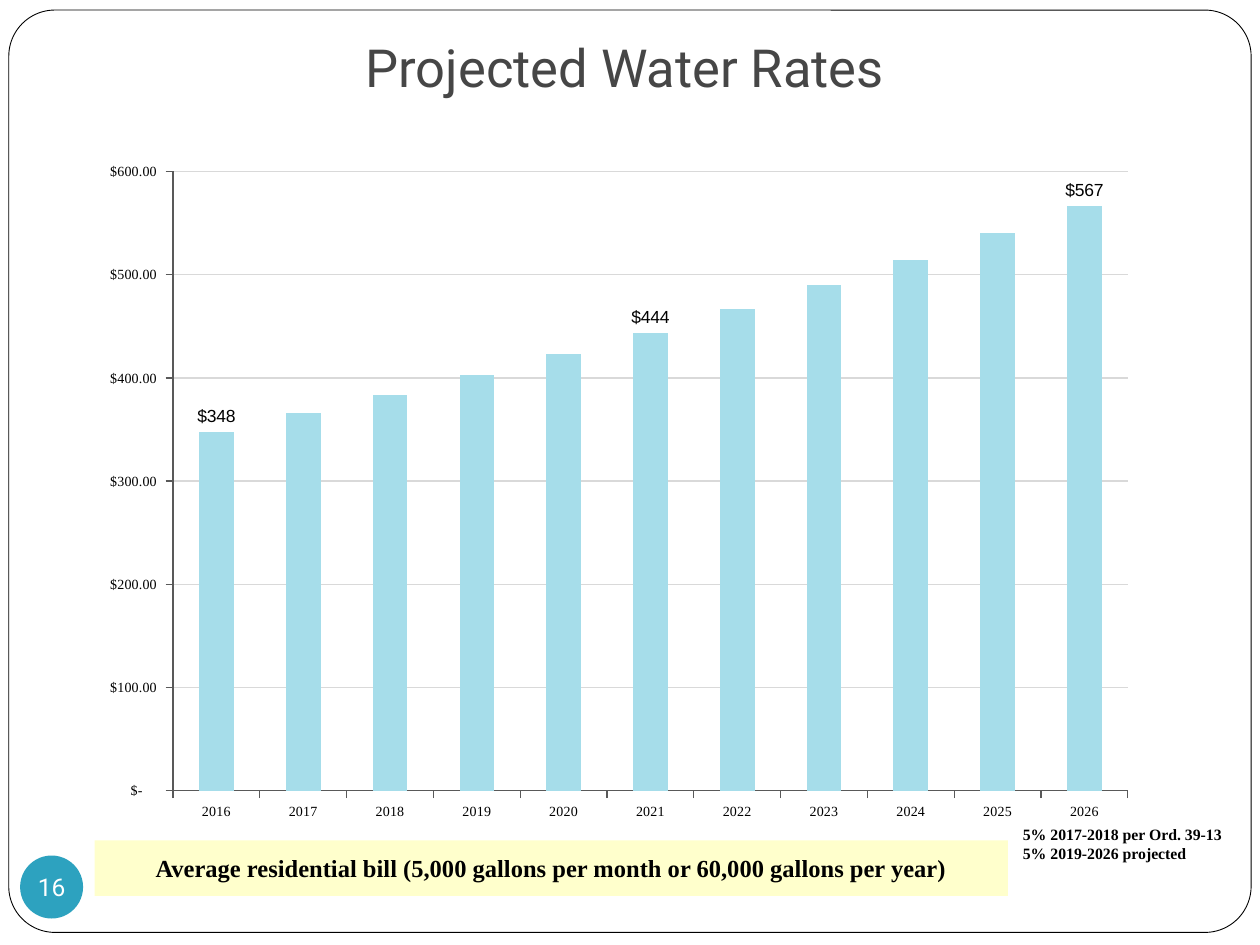
from lxml import etree
from pptx import Presentation
from pptx.chart.data import CategoryChartData
from pptx.dml.color import RGBColor
from pptx.enum.chart import XL_CHART_TYPE, XL_LABEL_POSITION, XL_TICK_MARK
from pptx.enum.shapes import MSO_SHAPE
from pptx.enum.text import MSO_ANCHOR, PP_ALIGN
from pptx.oxml import parse_xml
from pptx.oxml.ns import nsdecls, qn
from pptx.util import Inches, Pt

COLUMNS = XL_CHART_TYPE.COLUMN_CLUSTERED
ABOVE = XL_LABEL_POSITION.OUTSIDE_END
OUTSIDE = XL_TICK_MARK.OUTSIDE
NO_TICK = XL_TICK_MARK.NONE
ROUNDED, RECT, OVAL = MSO_SHAPE.ROUNDED_RECTANGLE, MSO_SHAPE.RECTANGLE, MSO_SHAPE.OVAL
CENTER, LEFT = PP_ALIGN.CENTER, PP_ALIGN.LEFT
TOP, MIDDLE, BOTTOM = MSO_ANCHOR.TOP, MSO_ANCHOR.MIDDLE, MSO_ANCHOR.BOTTOM

COLORS = {
    "paper": "FFFFFF", "ink": "000000", "title": "464646", "badge": "2DA2BF",
    "caption": "FFFFCC", "bar": "A6DDEA", "grid": "D9D9D9", "axis": "595959",
}
SERIF, SANS = "Times New Roman", "Roboto"


def style_font(font, name, size, color, bold=False):
    values = {"name": name, "size": Pt(size), "bold": bold}
    for key, value in values.items():
        setattr(font, key, value)
    font.color.rgb = RGBColor.from_string(COLORS[color])


def write(shape, lines, font, align, anchor, insets, wrap=True):
    frame = shape.text_frame
    frame.word_wrap = wrap
    frame.vertical_anchor = anchor
    for side, inset in zip(("left", "top", "right", "bottom"), insets):
        setattr(frame, f"margin_{side}", Inches(inset))
    for i, line in enumerate(lines):
        paragraph = frame.paragraphs[0] if i == 0 else frame.add_paragraph()
        paragraph.alignment = align
        run = paragraph.add_run()
        run.text = line
        style_font(run.font, *font)


prs = Presentation()
prs.slide_width, prs.slide_height = Inches(10), Inches(7.5)
slide = prs.slides.add_slide(prs.slide_layouts[5])
shapes = slide.shapes

# Frame, page badge and caption
plain = {}
for part, kind, box, fill in (
    ("frame", ROUNDED, (0.07, 0.08, 9.86, 7.32), "paper"),
    ("badge", OVAL, (0.16, 6.79, 0.5, 0.5), "badge"),
    ("caption", RECT, (0.75, 6.67, 7.25, 0.44), "caption"),
):
    shape = shapes.add_shape(kind, *map(Inches, box))
    shape.shadow.inherit = False
    shape.fill.solid()
    shape.fill.fore_color.rgb = RGBColor.from_string(COLORS[fill])
    shape.line.fill.background()
    plain[part] = shape

frame = plain["frame"]
frame.adjustments[0] = 0.05
frame.line.color.rgb = RGBColor.from_string(COLORS["ink"])
frame.line.width = Pt(0.5)
title = shapes.title
title._element.addprevious(frame._element)  # the frame lies behind the title

write(plain["badge"], ["16"], (SANS, 14, "paper"), CENTER, MIDDLE, (0, 0, 0, 0), wrap=False)
write(plain["caption"],
      ["Average residential bill (5,000 gallons per month or 60,000 gallons per year)"],
      (SERIF, 14, "ink", True), CENTER, TOP, (0.1, 0.1, 0.1, 0.1))

# Title
title.left, title.top, title.width, title.height = map(Inches, (0.25, 0.17, 9.42, 0.71))
write(title, ["Projected Water Rates"], (SANS, 30, "title"), CENTER, BOTTOM,
      (0.1, 0.05, 0.1, 0.1))

# Note on the rate increases
note = shapes.add_textbox(*map(Inches, (8.02, 6.5, 1.83, 0.48)))
write(note, ["5% 2017-2018 per Ord. 39-13", "5% 2019-2026 projected"],
      (SERIF, 9, "ink", True), LEFT, TOP, (0.1, 0.05, 0.1, 0.05))

# Chart of yearly bills
bills = CategoryChartData()
bills.categories = [str(year) for year in range(2016, 2027)]
bills.add_series("Series 1", (348, 365.62, 383.9, 403.1, 423.26, 444,
                              466.64, 489.97, 514.47, 540.19, 567))
chart = shapes.add_chart(COLUMNS, *map(Inches, (0.7, 1.2, 8.42, 5.4)), bills).chart
chart.has_legend = chart.has_title = False
style_font(chart.font, SERIF, 10, "ink")
plot = chart.plots[0]
plot.gap_width = 150
plot.vary_by_categories = False
bars = plot.series[0]
bars.format.fill.solid()
bars.format.fill.fore_color.rgb = RGBColor.from_string(COLORS["bar"])

# Fixed inner plot area
plot_area = chart._chartSpace.chart.plotArea
for old in plot_area.findall(qn("c:layout")):
    plot_area.remove(old)
layout = parse_xml(f"<c:layout {nsdecls('c')}><c:manualLayout/></c:layout>")
for tag, value in (("layoutTarget", "inner"), ("xMode", "edge"), ("yMode", "edge"),
                   ("x", "0.08"), ("y", "0.03"), ("w", "0.9"), ("h", "0.91")):
    etree.SubElement(layout[0], qn(f"c:{tag}")).set("val", value)
plot_area.insert(0, layout)

# Axes
years, dollars = chart.category_axis, chart.value_axis
for axis in (years, dollars):
    axis.major_tick_mark = OUTSIDE
    axis.minor_tick_mark = NO_TICK
    axis.format.line.color.rgb = RGBColor.from_string(COLORS["axis"])
    axis.format.line.width = Pt(0.75)
    style_font(axis.tick_labels.font, SERIF, 8, "ink")
for key, value in {"minimum_scale": 0, "maximum_scale": 600, "major_unit": 100}.items():
    setattr(dollars, key, value)
dollars.has_major_gridlines = True
grid = dollars.major_gridlines.format.line
grid.color.rgb = RGBColor.from_string(COLORS["grid"])
grid.width = Pt(0.75)
dollars.tick_labels.number_format = (
    '_("$"* #,##0.00_);_("$"* \\(#,##0.00\\);_("$"* "-"??_);_(@_)')
dollars.tick_labels.number_format_is_linked = False

# Labels on the first, middle and last bar
bars.data_labels.show_value = False
for index in (0, 5, 10):
    label = bars.points[index].data_label
    style_font(label.font, "Arial", 10, "ink")
    label.position = ABOVE
for text_style in bars._element.findall(f".//{qn('c:dLbl')}/{qn('c:txPr')}"):
    number = parse_xml(f"<c:numFmt {nsdecls('c')} sourceLinked='0'/>")
    number.set("formatCode", '"$"#,##0')
    text_style.getparent().insert(1, number)

prs.save("out.pptx")
